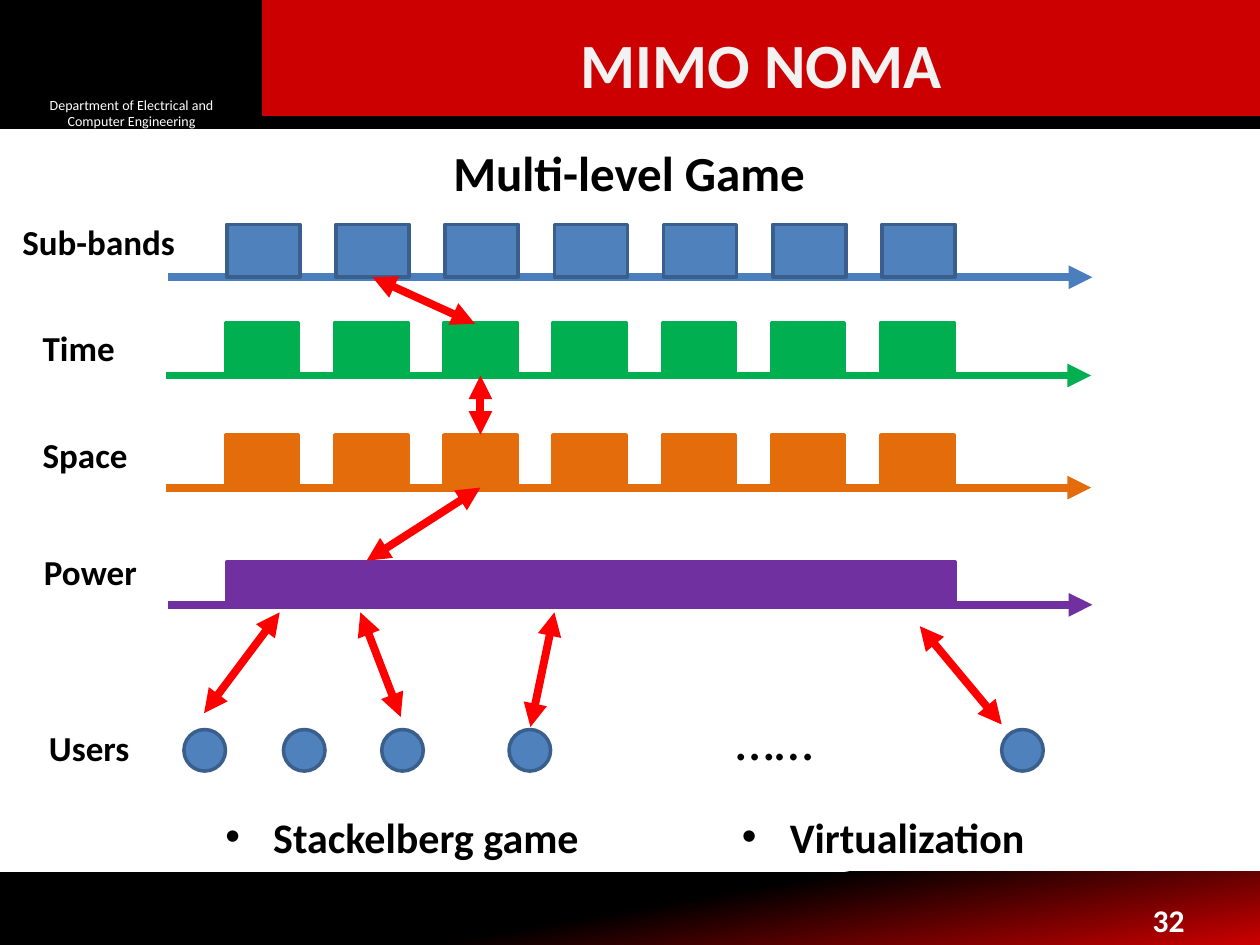
from lxml import etree
from pptx import Presentation
from pptx.dml.color import RGBColor
from pptx.enum.shapes import MSO_CONNECTOR as Connector, MSO_SHAPE as Shape
from pptx.enum.text import MSO_ANCHOR as Anchor, PP_ALIGN as Align
from pptx.oxml.ns import qn
from pptx.util import Inches, Pt

BLACK, WHITE, RED = "000000", "FFFFFF", "CC0000"
BLUE, BLUE_EDGE, BLUE_AXIS = "4F81BD", "3A5F8C", "4B7EBC"
GREEN, ORANGE, PURPLE, ARROW_RED = "00B050", "E46C0A", "7030A0", "FF0000"
TOP, BOTTOM = 0, 2


def color(value):
    """Turn a hex string into a colour."""
    return RGBColor.from_string(value)


def add_box(slide, kind, left, top, width, height, fill, edge=None):
    """Add a flat filled shape with an optional outline."""
    box = slide.shapes.add_shape(kind, Inches(left), Inches(top), Inches(width), Inches(height))
    box.shadow.inherit = False
    box.fill.solid()
    box.fill.fore_color.rgb = color(fill)
    if edge:
        box.line.color.rgb = color(edge)
        box.line.width = Pt(2)
    else:
        box.line.fill.background()
    return box


def write(box, text, size, ink=BLACK, bold=True, align=Align.LEFT, anchor=Anchor.TOP, wrap=True, bullet=False):
    """Write one formatted paragraph in a shape."""
    frame = box.text_frame
    frame.word_wrap = wrap
    frame.vertical_anchor = anchor
    para = frame.paragraphs[0]
    para.alignment = align
    if bullet:
        props = para._p.get_or_add_pPr()
        props.set("marL", str(Inches(0.38)))
        props.set("indent", str(-Inches(0.38)))
        etree.SubElement(props, qn("a:buFont"), typeface="Arial")
        etree.SubElement(props, qn("a:buChar"), char="•")
    span = para.add_run()
    span.text = text
    span.font.name = "Calibri"
    span.font.size = Pt(size)
    span.font.bold = bold
    span.font.color.rgb = color(ink)


def add_text(slide, left, top, width, height, text, size, **style):
    """Add a text box holding one paragraph."""
    box = slide.shapes.add_textbox(Inches(left), Inches(top), Inches(width), Inches(height))
    write(box, text, size, **style)


def add_arrow(slide, start, end, ink, both=False):
    """Add a thick straight arrow with one or two heads."""
    points = [Inches(value) for value in (*start, *end)]
    arrow = slide.shapes.add_connector(Connector.STRAIGHT, *points)
    arrow.line.color.rgb = color(ink)
    arrow.line.width = Pt(4.5)
    line = arrow.line._get_or_add_ln()
    for tag in ("a:headEnd", "a:tailEnd") if both else ("a:tailEnd",):
        etree.SubElement(line, qn(tag), type="triangle")
    etree.SubElement(arrow._element.spPr, qn("a:effectLst"))
    return arrow


def add_level(slide, left, axis_y, height, widths, fill, edge, axis_ink):
    """Add a resource axis with evenly spread blocks standing on it."""
    add_arrow(slide, (left, axis_y), (left + 7.34, axis_y), axis_ink)
    step = 5.2 / 6
    return [
        add_box(slide, Shape.RECTANGLE, left + 0.47 + index * step, axis_y - height, width, height, fill, edge)
        for index, width in enumerate(widths)
    ]


def add_frame(slide):
    """Add the header and footer bands with their texts."""
    footer = add_box(slide, Shape.RECTANGLE, 0, 6.92, 10, 0.58, BLACK)
    footer.fill.gradient()
    footer.fill.gradient_angle = 280
    for stop, position, ink in zip(footer.fill.gradient_stops, (0.5, 1), (BLACK, RED)):
        stop.position = position
        stop.color.rgb = color(ink)
    add_box(slide, Shape.RECTANGLE, 0, 0.01, 10, 1, BLACK, BLACK)
    department = add_box(slide, Shape.RECTANGLE, 0.17, 0.77, 1.75, 0.25, BLACK)
    write(department, "Department of Electrical and Computer Engineering", 8, ink=WHITE,
          bold=False, align=Align.CENTER, anchor=Anchor.MIDDLE)
    add_box(slide, Shape.RECTANGLE, 2.08, 0, 7.92, 0.92, RED)
    add_text(slide, 7.17, 7.1, 2.33, 0.4, "32", 18, ink=WHITE, align=Align.RIGHT, anchor=Anchor.MIDDLE)
    add_text(slide, 2.25, 0.17, 7.58, 0.67, "MIMO NOMA", 36, ink="F2F2F2",
             align=Align.CENTER, anchor=Anchor.MIDDLE)
    add_text(slide, 3.5, 1.08, 6.92, 0.57, "Multi-level Game", 28)


def add_labels(slide):
    """Add the row names and the bulleted topics."""
    for left, top, width, text in (
        (0.08, 1.7, 1.43, "Sub-bands"),
        (0.24, 2.54, 0.78, "Time"),
        (0.24, 3.39, 0.88, "Space"),
        (0.25, 4.32, 0.95, "Power"),
        (0.29, 5.72, 0.85, "Users"),
    ):
        add_text(slide, left, top, width, 0.44, text, 20, wrap=False)
    add_text(slide, 5.74, 5.54, 0.82, 0.64, "……", 32, bold=False, wrap=False)
    for left, width, text in ((1.69, 3.03, "Stackelberg game"), (5.79, 2.46, "Virtualization")):
        add_text(slide, left, 6.39, width, 0.5, text, 24, wrap=False, bullet=True)


def add_game(slide):
    """Add the levels, the users and the arrows between them."""
    for left in (1.46, 2.25, 3.03, 4.04, 7.95):
        add_box(slide, Shape.OVAL, left, 5.79, 0.33, 0.33, BLUE, BLUE_EDGE)
    blocks = [0.58] * 7
    bands = add_level(slide, 1.33, 2.2, 0.42, blocks, BLUE, BLUE_EDGE, BLUE_AXIS)
    times = add_level(slide, 1.32, 2.98, 0.42, blocks, GREEN, GREEN, GREEN)
    spaces = add_level(slide, 1.32, 3.87, 0.42, blocks, ORANGE, ORANGE, ORANGE)
    add_level(slide, 1.33, 4.8, 0.34, [5.78], PURPLE, PURPLE, PURPLE)

    for start, end in (
        ((1.62, 5.66), (2.22, 4.86)),
        ((3.18, 5.69), (2.86, 4.86)),
        ((4.21, 5.77), (4.4, 4.86)),
        ((7.95, 5.75), (7.3, 4.97)),
    ):
        add_arrow(slide, start, end, ARROW_RED, both=True)
    power_space = add_arrow(slide, (2.91, 4.45), (3.81, 3.87), ARROW_RED, both=True)
    power_space.end_connect(spaces[2], BOTTOM)
    space_time = add_arrow(slide, (3.81, 3.46), (3.81, 2.98), ARROW_RED, both=True)
    space_time.begin_connect(spaces[2], TOP)
    space_time.end_connect(times[2], BOTTOM)
    time_band = add_arrow(slide, (3.77, 2.57), (2.95, 2.2), ARROW_RED, both=True)
    time_band.end_connect(bands[1], BOTTOM)


def main():
    """Build the slide and save the deck."""
    deck = Presentation()
    deck.slide_width, deck.slide_height = Inches(10), Inches(7.5)
    page = deck.slides.add_slide(deck.slide_layouts[6])
    add_frame(page)
    add_game(page)
    add_labels(page)
    deck.save("out.pptx")


if __name__ == "__main__":
    main()
